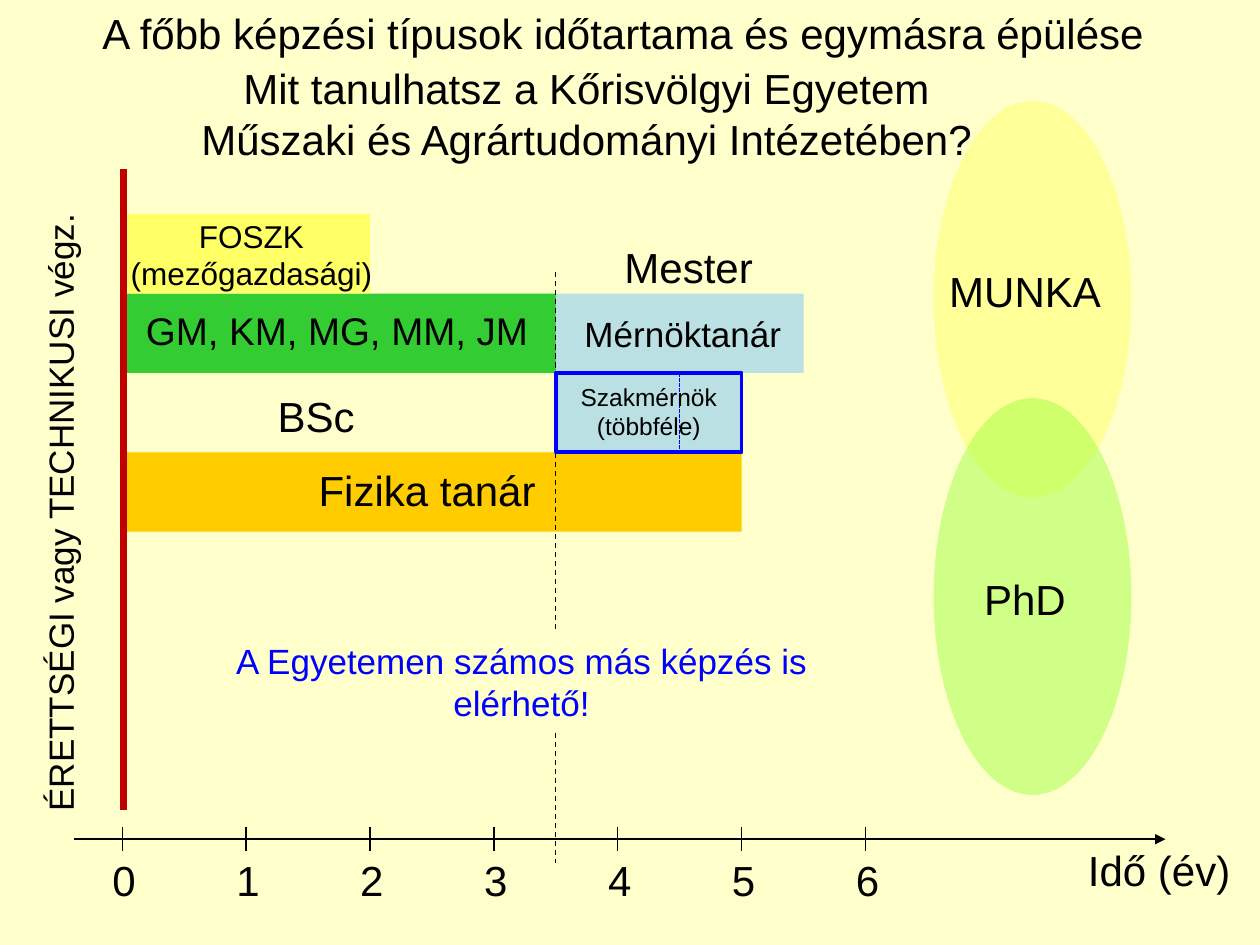
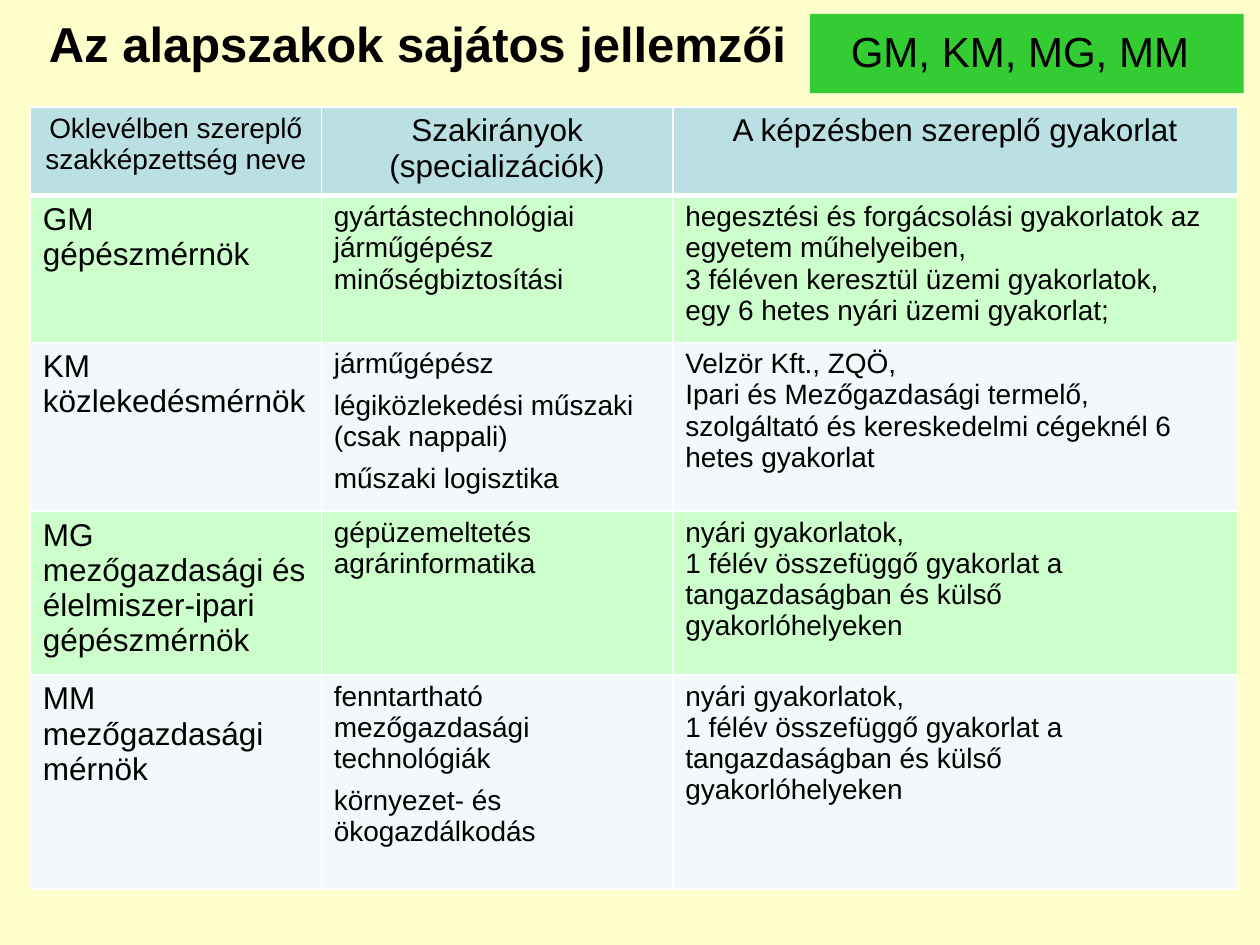
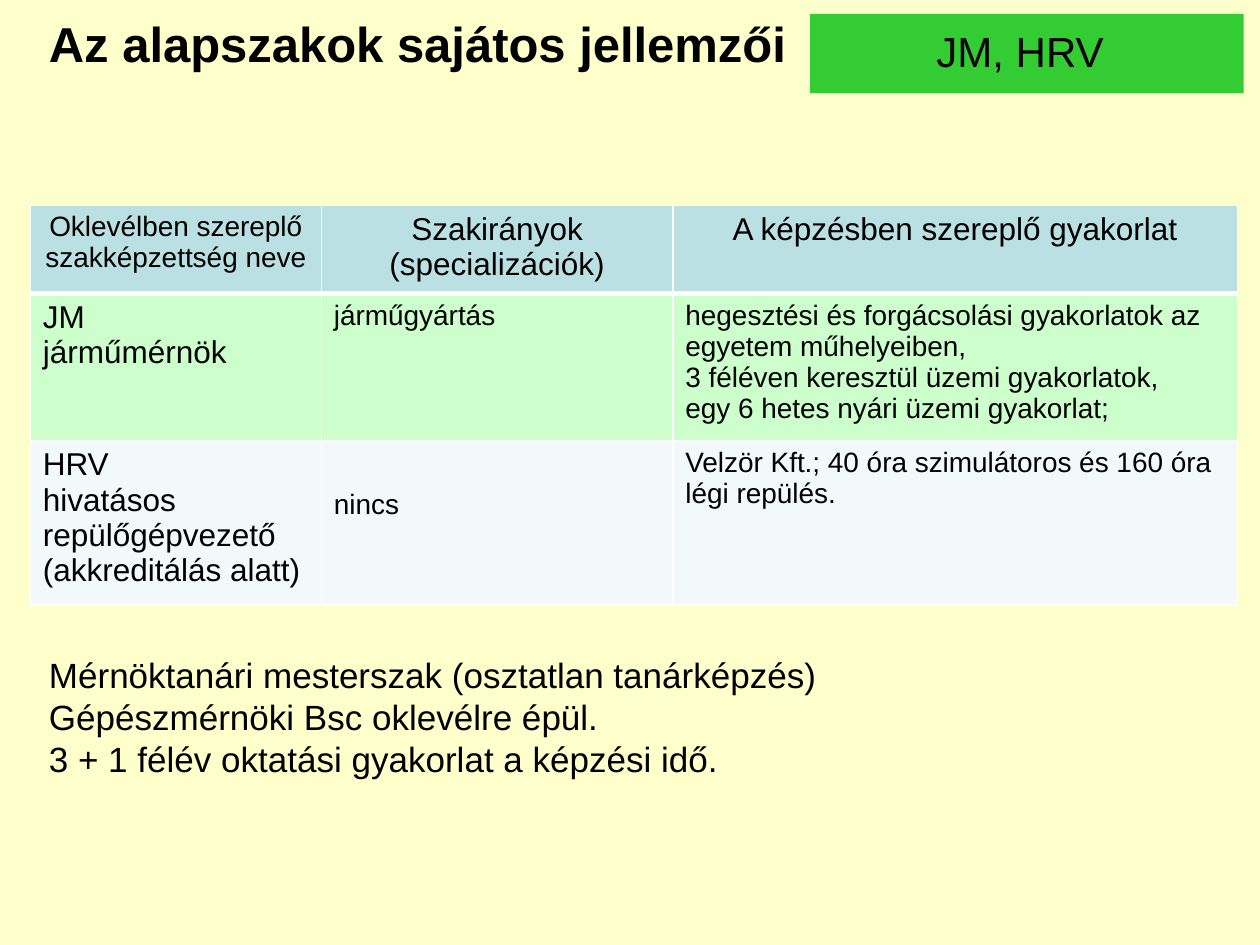
from collections import namedtuple
from pptx import Presentation
from pptx.dml.color import RGBColor as RGB
from pptx.enum.dml import MSO_LINE as DASH
from pptx.enum.shapes import MSO_CONNECTOR as LINK, MSO_SHAPE as KIND
from pptx.enum.text import PP_ALIGN as ALIGN
from pptx.oxml.ns import qn
from pptx.util import Inches, Pt
from lxml.etree import SubElement as sub

Box = namedtuple("Box", "x y w h")
Row = namedtuple("Row", "high name field work gap drop", defaults=(0, 0.05))


class Theme:
    font = "Arial"
    back, ink, white = "FFFFCC", "000000", "FFFFFF"
    green, lemon, gold, ice = "33CC33", "FFFF66", "FFCC00", "BBE0E3"
    cream, lime, red, blue = "FFFF99", "9DFF3B", "C00000", "0000FF"
    bands = ("CCFFCC", "F3F9FA")
    head, big, mid, note, body, small, tiny = 28, 24, 22, 20, 18, 16, 14


YEAR = 5.9 / 6
ROW = 0.63
COLS = (2.31, 2.79, 4.48)
HEADS = ("Oklevélben szereplő szakképzettség neve",
         "Szakirányok (specializációk)", "A képzésben szereplő gyakorlat")
SHOP = ("hegesztési és forgácsolási gyakorlatok az egyetem műhelyeiben,",
        "3 féléven keresztül üzemi gyakorlatok,",
        "egy 6 hetes nyári üzemi gyakorlat;")
FARM = ("nyári gyakorlatok,",
        "1 félév összefüggő gyakorlat a tangazdaságban és külső gyakorlóhelyeken")
BASE = (
    Row(1.16, ("GM", "gépészmérnök"),
        ("gyártástechnológiai", "járműgépész", "minőségbiztosítási"), SHOP),
    Row(1.34, ("KM", "közlekedésmérnök"),
        ("járműgépész", "légiközlekedési műszaki (csak nappali)",
         "műszaki logisztika"),
        ("Velzör Kft., ZQÖ,",
         "Ipari és Mezőgazdasági termelő, szolgáltató és kereskedelmi "
         "cégeknél 6 hetes gyakorlat"), 6),
    Row(1.3, ("MG", "mezőgazdasági és élelmiszer-ipari gépészmérnök"),
        ("gépüzemeltetés", "agrárinformatika"), FARM),
    Row(1.7, ("MM", "mezőgazdasági mérnök"),
        ("fenntartható mezőgazdasági technológiák",
         "környezet- és ökogazdálkodás"), FARM, 6),
)
MORE = (
    Row(1.17, ("JM", "járműmérnök"), ("járműgyártás",), SHOP),
    Row(1.3, ("HRV", "hivatásos repülőgépvezető (akkreditálás alatt)"),
        ("nincs",),
        ("Velzör Kft.; 40 óra szimulátoros és 160 óra légi repülés.",),
        6, 0.38),
)


def write(frame, lines, size, align=ALIGN.CENTER, color=Theme.ink,
          bold=False, gap=0, lead=1.0):
    frame.word_wrap = True
    for i, line in enumerate(lines):
        para = frame.paragraphs[0] if i == 0 else frame.add_paragraph()
        para.alignment = align
        para.space_after = Pt(gap)
        para.line_spacing = lead
        run = para.add_run()
        run.text = line
        font = run.font
        font.name, font.size, font.bold = Theme.font, Pt(size), bold
        font.color.rgb = RGB.from_string(color)


def text(slide, box, lines, size, **style):
    shape = slide.shapes.add_textbox(*map(Inches, box))
    write(shape.text_frame, lines, size, **style)
    return shape


def block(slide, box, color, kind=KIND.RECTANGLE, edge=None):
    shape = slide.shapes.add_shape(kind, *map(Inches, box))
    shape.shadow.inherit = False
    shape.fill.solid()
    shape.fill.fore_color.rgb = RGB.from_string(color)
    if edge:
        shape.line.color.rgb = RGB.from_string(edge)
        shape.line.width = Pt(2)
    else:
        shape.line.fill.background()
    return shape


def rule(slide, x, y, to_x, to_y, color=Theme.ink, width=0.75,
         dash=None, arrow=False):
    link = slide.shapes.add_connector(
        LINK.STRAIGHT, *map(Inches, (x, y, to_x, to_y)))
    link.line.color.rgb = RGB.from_string(color)
    link.line.width = Pt(width)
    if dash:
        link.line.dash_style = dash
    props = link.element.find(qn("p:spPr"))
    if arrow:
        sub(props.find(qn("a:ln")), qn("a:tailEnd"), type="triangle")
    sub(props, qn("a:effectLst"))


def bars(slide, box):
    x, y = box.x, box.y
    for start, years, row, color in (
            (0, 3.5, 1, Theme.green), (0, 2, 0, Theme.lemon),
            (0, 5, 3, Theme.gold), (3.5, 2, 1, Theme.ice)):
        block(slide, Box(x + start * YEAR, y + row * ROW, years * YEAR, ROW),
              color)
    for dx, dy, w, h, label, size in (
            (-0.4, -0.03, 2.85, 0.71, "FOSZK (mezőgazdasági)", Theme.body),
            (0.09, 0.69, 3.35, 0.47, "GM, KM, MG, MM, JM", Theme.mid),
            (1.15, 1.94, 2.54, 0.5, "Fizika tanár", Theme.big),
            (3.3, 0.73, 2.3, 0.44, "Mérnöktanár", Theme.note),
            (1, 1.35, 1.08, 0.5, "BSc", Theme.big),
            (3.69, 0.17, 1.61, 0.5, "Mester", Theme.big)):
        align = ALIGN.LEFT if size == Theme.mid else ALIGN.CENTER
        text(slide, Box(x + dx, y + dy, w, h), [label], size, align=align)


def wall(slide, box):
    label = text(slide, Box(box.x, box.y, 0.54, box.h),
                 ["ÉRETTSÉGI vagy TECHNIKUSI végz."], Theme.note)
    label.element.find(".//" + qn("a:bodyPr")).set("vert", "vert270")
    edge = box.x + box.w
    rule(slide, edge, box.y, edge, box.y + 5.09, Theme.red, 4)


def goals(slide, box):
    high = 3.15
    for dy, color, label, drop in ((0, Theme.cream, "MUNKA", 1.26),
                                   (2.36, Theme.lime, "PhD", 3.7)):
        oval = block(slide, Box(box.x, box.y + dy, box.w, high), color,
                     KIND.OVAL)
        if dy:
            tint = oval.element.find(".//" + qn("a:srgbClr"))
            sub(tint, qn("a:alpha"), val="47000")
        text(slide, Box(box.x - 0.08, box.y + drop, 1.61, 0.5), [label],
             Theme.big)


def axis(slide, box):
    mid = box.y + 0.1
    rule(slide, box.x, mid, box.x + box.w, mid, arrow=True)
    for year in range(7):
        x = box.x + 0.38 + year * YEAR
        rule(slide, x, box.y + 0.19, x, box.y)
        text(slide, Box(x - 0.21, box.y + 0.17, 0.45, 0.5), [str(year)],
             Theme.big)
    text(slide, Box(box.x + 7.84, box.y + 0.09, 1.54, 0.5), ["Idő (év)"],
         Theme.big)


def extra(slide, box):
    block(slide, box, Theme.ice, edge=Theme.blue)
    x = box.x + YEAR
    rule(slide, x, box.y, x, box.y + box.h, Theme.blue,
         dash=DASH.SQUARE_DOT)
    text(slide, Box(box.x - 0.1, box.y + 0.02, box.w + 0.2, 0.57),
         ["Szakmérnök", "(többféle)"], Theme.tiny)


def plan(slide):
    left, top = 0.97, 1.7
    split = left + 3.5 * YEAR
    bars(slide, Box(left, top, 5 * YEAR, 4 * ROW))
    wall(slide, Box(0.26, 1.34, 0.72, 5.46))
    goals(slide, Box(7.41, 0.8, 1.57, 5.51))
    axis(slide, Box(0.59, 6.56, 8.66, 0.19))
    rule(slide, split, 2.16, split, 6.85, dash=DASH.DASH)
    note = block(slide, Box(1.21, 5.02, 5.86, 0.77), Theme.back)
    write(note.text_frame, ["A Egyetemen számos más képzés is elérhető!"],
          Theme.note, color=Theme.blue)
    extra(slide, Box(split, top + 2 * ROW, 1.5 * YEAR, ROW))
    text(slide, Box(0.59, 0.01, 8.71, 0.5),
         ["A főbb képzési típusok időtartama és egymásra épülése"], Theme.big)
    text(slide, Box(1.43, 0.45, 6.45, 0.91),
         ["Mit tanulhatsz a Kőrisvölgyi Egyetem",
          "Műszaki és Agrártudományi Intézetében?"], Theme.big)


def banner(slide, box, tag):
    text(slide, Box(box.x, box.y, 6.14, box.h),
         ["Az alapszakok sajátos jellemzői"], Theme.head,
         align=ALIGN.LEFT, bold=True, lead=0.9)
    x = box.x + 6.14
    block(slide, Box(x, box.y, 3.44, box.h), Theme.green)
    text(slide, Box(x + 0.09, box.y + 0.04, 3.15, 0.5), [tag], Theme.big)


def paint(cell, color, top, base):
    props = cell._tc.get_or_add_tcPr()
    for side, width in (("L", 1), ("R", 1), ("T", top), ("B", base)):
        line = sub(props, qn("a:ln" + side), w=str(Pt(width)))
        fill = sub(line, qn("a:solidFill"))
        sub(fill, qn("a:srgbClr"), val=Theme.white)
    cell.fill.solid()
    cell.fill.fore_color.rgb = RGB.from_string(color)


def grid(slide, box, rows):
    heights = [0.69] + [row.high for row in rows]
    frame = slide.shapes.add_table(
        len(heights), len(COLS),
        *map(Inches, (box.x, box.y, box.w, sum(heights))))
    table = frame.table
    table.first_row = table.horz_banding = False
    for col, wide in zip(table.columns, COLS):
        col.width = Inches(wide)
    for line, high in zip(table.rows, heights):
        line.height = Inches(high)
    for i, (head, size) in enumerate(
            zip(HEADS, (Theme.small, Theme.body, Theme.body))):
        cell = table.cell(0, i)
        paint(cell, Theme.ice, 1, 3)
        write(cell.text_frame, [head], size)
    for r, row in enumerate(rows, 1):
        for i, lines in enumerate((row.name, row.field, row.work)):
            cell = table.cell(r, i)
            paint(cell, Theme.bands[(r - 1) % 2], 3 if r == 1 else 1, 1)
            write(cell.text_frame, lines, Theme.small if i else Theme.body,
                  align=ALIGN.LEFT, gap=row.gap if i == 1 else 0)
            if i == 1:
                cell.margin_top = Inches(row.drop)


def course(slide, tag, top, rows):
    banner(slide, Box(0.29, 0.11, 9.58, ROW), tag)
    grid(slide, Box(0.24, top, sum(COLS), 0), rows)


def main():
    deck = Presentation()
    deck.slide_width, deck.slide_height = Inches(10), Inches(7.5)
    slides = []
    for i in range(3):
        slide = deck.slides.add_slide(deck.slide_layouts[6])
        slide.background.fill.solid()
        slide.background.fill.fore_color.rgb = RGB.from_string(Theme.back)
        slides.append(slide)
    first, second, third = slides
    plan(first)
    course(second, "GM, KM, MG, MM", 0.85, BASE)
    course(third, "JM, HRV", 1.63, MORE)
    text(third, Box(0.29, 5.14, 9.36, 1.41),
         ["Mérnöktanári mesterszak (osztatlan tanárképzés)",
          "Gépészmérnöki Bsc oklevélre épül.",
          "3 + 1 félév oktatási gyakorlat a képzési idő."],
         Theme.note, align=ALIGN.LEFT)
    deck.save("out.pptx")


if __name__ == "__main__":
    main()
